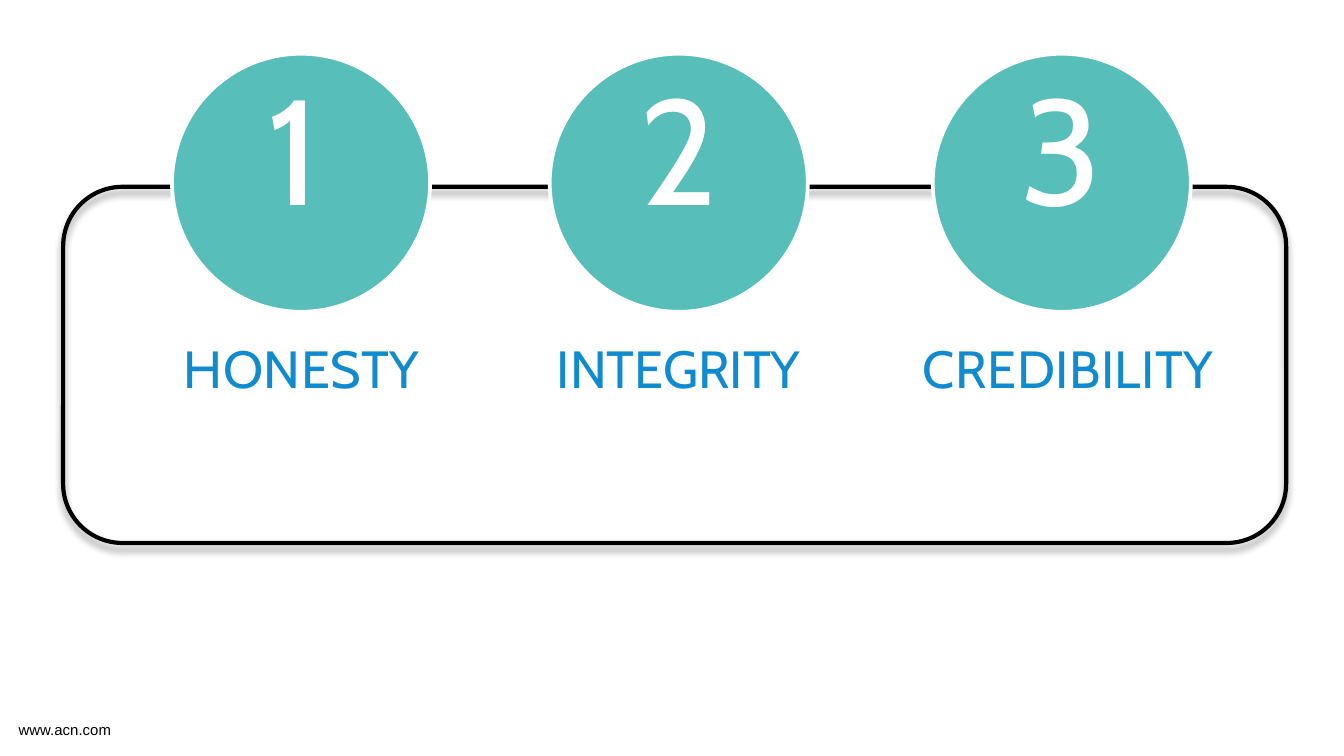
from lxml.etree import SubElement
from pptx import Presentation
from pptx.dml.color import RGBColor as RGB
from pptx.enum.shapes import MSO_SHAPE as Kind
from pptx.enum.text import PP_ALIGN as Align
from pptx.oxml.ns import qn
from pptx.util import Inches, Pt

COLORS = {"teal": "57BEBA", "blue": "118BCF", "black": "000000", "white": "FFFFFF"}
CELL = 0.1  # grid cell in inches: 100 columns across the slide


def color(name):
    return RGB.from_string(COLORS[name])


def write(box, text, font="Cabin", size=28, tint="blue", align=Align.CENTER,
          lead=None, track=0):
    frame = box.text_frame
    frame.word_wrap = True
    para = frame.paragraphs[0]
    para.alignment = align
    if lead:
        para.line_spacing = lead
    run = para.add_run()
    run.text = text
    run.font.name = font
    run.font.size = Pt(size)
    run.font.color.rgb = color(tint)
    if track:
        run.font._element.set("spc", str(round(track * 100)))


class Deck:
    def __init__(self, wide, ratio):
        self.show = Presentation()
        self.show.slide_width = Inches(wide)
        self.show.slide_height = Inches(wide / ratio)
        self.slide = self.show.slides.add_slide(self.show.slide_layouts[6])

    def grid(self, *cells):
        return [Inches(cell * CELL) for cell in cells]

    def shape(self, kind, area, line, width, fill=None):
        item = self.slide.shapes.add_shape(kind, *self.grid(*area))
        item.shadow.inherit = False
        if fill:
            item.fill.solid()
            item.fill.fore_color.rgb = color(fill)
        else:
            item.fill.background()
        item.line.color.rgb = color(line)
        item.line.width = Pt(width)
        return item

    def frame(self, area):
        item = self.shape(Kind.ROUNDED_RECTANGLE, area, "black", 2.25)
        # Soft shadow straight below
        effects = item._element.spPr.find(qn("a:effectLst"))
        shade = SubElement(effects, qn("a:outerShdw"), blurRad=str(Pt(4)),
                           dist=str(Pt(3.4)), dir="5400000", rotWithShape="0")
        tone = SubElement(shade, qn("a:srgbClr"), val=COLORS["black"])
        SubElement(tone, qn("a:alpha"), val="40000")

    def disc(self, left, top, size):
        self.shape(Kind.OVAL, (left, top, size, size), "white", 2, "teal")

    def text(self, area, words, **style):
        write(self.slide.shapes.add_textbox(*self.grid(*area)), words, **style)

    def save(self):
        self.show.save("out.pptx")


def main():
    deck = Deck(10, 16 / 9)

    # Footer and frame
    deck.text((0.4, 53.1, 16.5, 2.4), "www.acn.com", font="Arial", size=8,
              tint="black", align=Align.LEFT)
    deck.frame((4.7, 13.9, 91, 26.5))

    # Values: disc left, digit left, label left, label width, tracking
    size = 19.2
    values = [
        ("HONESTY", 12.8, 12.3, 10.6, 23.7, 0.3),
        ("INTEGRITY", 40.9, 40.9, 36.3, 28.4, 0),
        ("CREDIBILITY", 69.4, 69.4, 64.7, 29.6, 0.3),
    ]
    for count, (name, left, digit, start, wide, track) in enumerate(values, 1):
        deck.disc(left, 4, size)
        deck.text((digit, 6.3, size, 18), str(count), size=80, tint="white", lead=0.8)
        deck.text((start, 24.5, wide, 7.6), name, track=track)

    deck.save()


if __name__ == "__main__":
    main()
